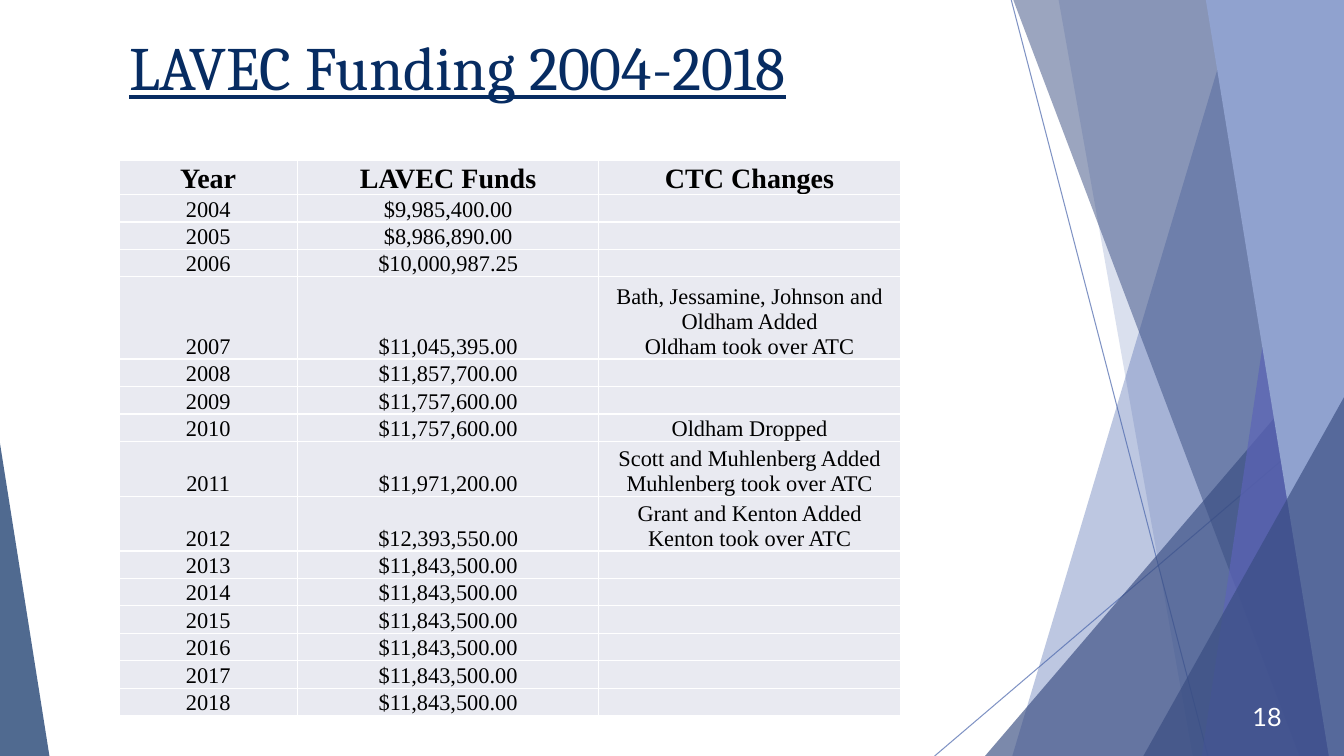
from lxml.etree import SubElement
from pptx import Presentation
from pptx.dml.color import RGBColor
from pptx.enum.shapes import MSO_CONNECTOR, MSO_SHAPE
from pptx.enum.text import MSO_ANCHOR as ANCHOR, MSO_AUTO_SIZE as AUTO, PP_ALIGN as ALIGN
from pptx.oxml.ns import qn
from pptx.util import Pt

PX = 9144
WIDTH, HEIGHT = 1333, 750
COLORS = {
    "blue": "4A66AC", "dark": "384C81", "violet": "5C64B7", "light": "90A2CF",
    "navy": "072C62", "cell": "E9EAF1", "white": "FFFFFF", "black": "000000",
}
HEADER = ("Year", "LAVEC Funds", "CTC Changes")
FUNDS = [
    "$9,985,400.00", "$8,986,890.00", "$10,000,987.25", "$11,045,395.00",
    "$11,857,700.00", "$11,757,600.00", "$11,757,600.00", "$11,971,200.00",
    "$12,393,550.00",
] + ["$11,843,500.00"] * 6
CHANGES = {
    2007: "Bath, Jessamine, Johnson and Oldham Added\nOldham took over ATC",
    2010: "Oldham Dropped",
    2011: "Scott and Muhlenberg Added\nMuhlenberg took over ATC",
    2012: "Grant and Kenton Added\nKenton took over ATC",
}
LINES = {2007: 3, 2011: 2, 2012: 2}
HEADER_LINES = 1.25


class Deck:
    def __init__(self):
        self.prs = Presentation()
        self.prs.slide_width, self.prs.slide_height = WIDTH * PX, HEIGHT * PX
        self.s = self.prs.slides.add_slide(self.prs.slide_layouts[5])

    def paint(self, fill, color, alpha=100):
        fill.solid()
        fill.fore_color.rgb = RGBColor.from_string(COLORS[color])
        if alpha < 100:
            for clr in fill._xPr.iter(qn("a:srgbClr")):
                SubElement(clr, qn("a:alpha"), val=str(alpha * 1000))

    def style(self, sp, color, alpha):
        sp.shadow.inherit = False
        sp.line.fill.background()
        self.paint(sp.fill, color, alpha)

    def line(self, x1, y1, x2, y2):
        sp = self.s.shapes.add_connector(
            MSO_CONNECTOR.STRAIGHT, x1 * PX, y1 * PX, x2 * PX, y2 * PX)
        sp.line.width = Pt(0.75)
        self.paint(sp.line.fill, "blue", 70)
        SubElement(sp._element.spPr, qn("a:effectLst"))

    def band(self, top, bottom, color, alpha):
        fb = self.s.shapes.build_freeform(top, 0, scale=PX)
        fb.add_line_segments([(WIDTH, 0), (WIDTH, HEIGHT), (bottom, HEIGHT)])
        self.style(fb.convert_to_shape(), color, alpha)

    def triangle(self, x, y, w, apex, color, alpha):
        sp = self.s.shapes.add_shape(
            MSO_SHAPE.ISOSCELES_TRIANGLE, x * PX, y * PX, w * PX, (HEIGHT - y) * PX)
        sp.adjustments[0] = apex
        self.style(sp, color, alpha)

    def run(self, p, text, size, font, color, bold=False, underline=False):
        r = p.add_run()
        r.text = text
        f = r.font
        f.size, f.name, f.bold, f.underline = Pt(size), font, bold, underline
        f.color.rgb = RGBColor.from_string(COLORS[color])

    def title(self, text, x, y, w, h):
        sp = self.s.shapes.title
        sp.left, sp.top, sp.width, sp.height = x * PX, y * PX, w * PX, h * PX
        tf = sp.text_frame
        tf.auto_size, tf.vertical_anchor = AUTO.NONE, ANCHOR.TOP
        p = tf.paragraphs[0]
        p.alignment = ALIGN.LEFT
        self.run(p, text, 44, "Cambria", "navy", underline=True)

    def number(self, text, x, y, w, h):
        tf = self.s.shapes.add_textbox(x * PX, y * PX, w * PX, h * PX).text_frame
        tf.word_wrap, tf.vertical_anchor = True, ANCHOR.MIDDLE
        p = tf.paragraphs[0]
        p.alignment = ALIGN.RIGHT
        self.run(p, text, 18, "Lato", "white")

    def cell(self, cell, text, size, bold):
        cell.margin_left = cell.margin_right = cell.margin_top = cell.margin_bottom = 0
        cell.vertical_anchor = ANCHOR.BOTTOM
        tcPr = cell._tc.get_or_add_tcPr()
        for side in ("lnL", "lnR", "lnT", "lnB"):
            ln = SubElement(tcPr, qn("a:" + side), w=str(Pt(1)))
            SubElement(SubElement(ln, qn("a:solidFill")), qn("a:srgbClr"), val=COLORS["white"])
        self.paint(cell.fill, "cell")
        tf = cell.text_frame
        for i, part in enumerate(text.split("\n")):
            p = tf.add_paragraph() if i else tf.paragraphs[0]
            p.alignment = ALIGN.CENTER
            if part:
                self.run(p, part, size, "Times New Roman", "black", bold)
            else:
                end = SubElement(p._p, qn("a:endParaRPr"), sz=str(size * 100))
                SubElement(end, qn("a:latin"), typeface="Times New Roman")

    def table(self, rows, lines, x, y, widths, h):
        tbl = self.s.shapes.add_table(
            len(rows), len(widths), x * PX, y * PX, sum(widths) * PX, h * PX).table
        tbl.first_row = tbl.horz_banding = False
        for col, w in zip(tbl.columns, widths):
            col.width = w * PX
        for i, (row, n) in enumerate(zip(rows, lines)):
            tbl.rows[i].height = round(h * PX * n / sum(lines))
            for j, text in enumerate(row):
                self.cell(tbl.cell(i, j), text, 16 if i else 20, i == 0)


def main():
    deck = Deck()
    deck.line(1003, 0, 1198, HEIGHT)
    deck.line(WIDTH, 404, 927, HEIGHT)
    deck.band(1228, 1004, "blue", 36)
    deck.band(1050, 1183, "blue", 20)
    deck.triangle(977, 334, 356, 1, "dark", 66)
    deck.band(1005, 1289, "dark", 50)
    deck.band(1303, 1192, "violet", 70)
    deck.band(1196, 1318, "light", 100)
    deck.triangle(1134, 394, 199, 1, "dark", 66)
    deck.triangle(0, 440, 49, 0, "navy", 70)
    deck.title("LAVEC Funding 2004-2018", 118, 24, 940, 85)
    deck.number("18", 1206, 691, 75, 40)
    years = range(2004, 2019)
    rows = [HEADER] + [(str(y), f, CHANGES.get(y, "")) for y, f in zip(years, FUNDS)]
    lines = [HEADER_LINES] + [LINES.get(y, 1) for y in years]
    deck.table(rows, lines, 118, 159, (177, 299, 299), 551)
    deck.prs.save("out.pptx")


if __name__ == "__main__":
    main()
